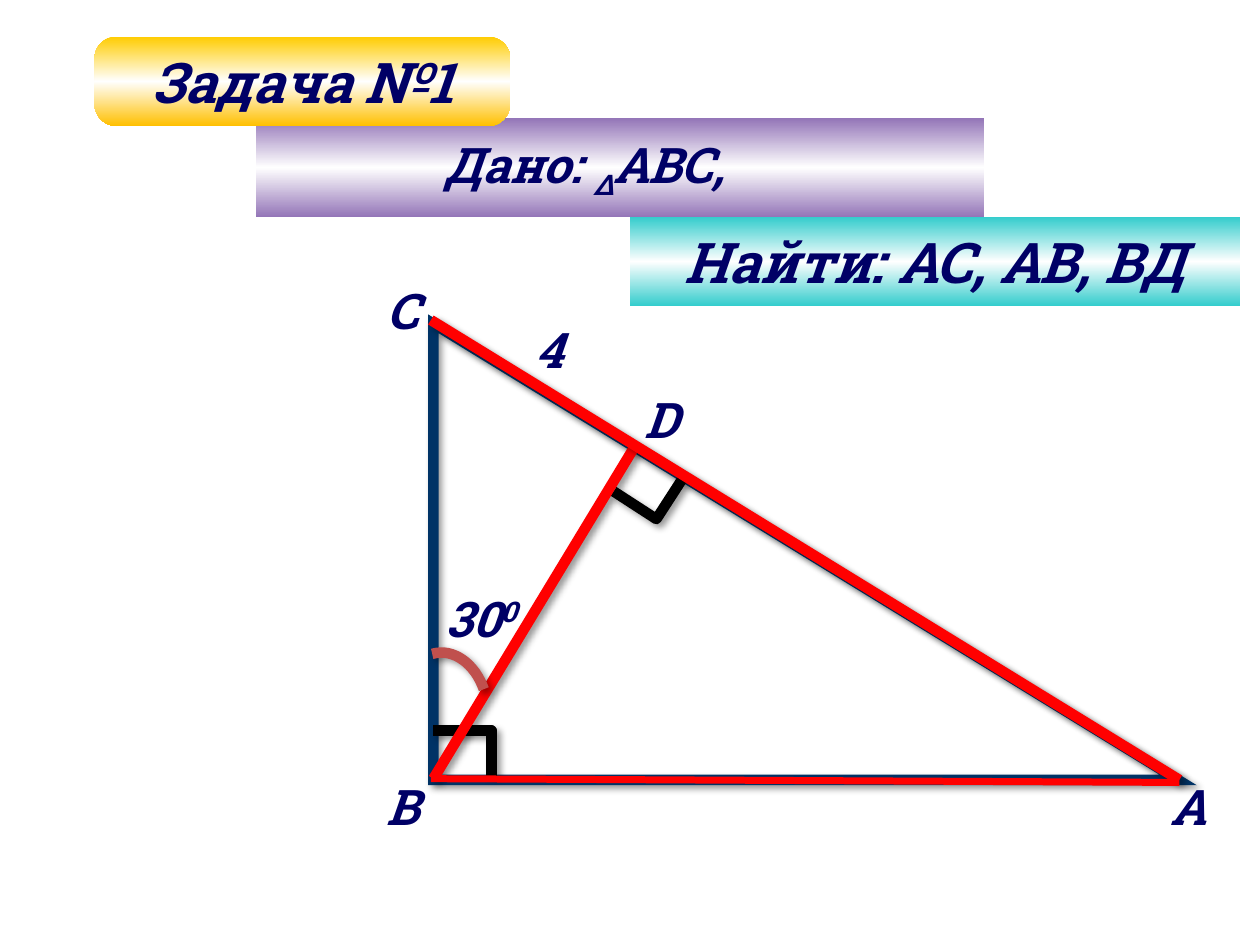
from copy import deepcopy

from lxml.etree import SubElement
from pptx import Presentation
from pptx.dml.color import RGBColor
from pptx.enum.shapes import MSO_CONNECTOR, MSO_SHAPE
from pptx.enum.text import MSO_ANCHOR, MSO_AUTO_SIZE, PP_ALIGN
from pptx.oxml.ns import qn
from pptx.util import Inches, Pt

FONT = "Roboto Slab"
INK = RGBColor(0x00, 0x00, 0x66)
NAVY = RGBColor(0x00, 0x00, 0x80)
SIDE_BLUE = RGBColor(0x00, 0x33, 0x66)
RED = RGBColor(0xFF, 0x00, 0x00)
ARC_RED = RGBColor(0xC0, 0x50, 0x4D)
BLACK = RGBColor(0x00, 0x00, 0x00)
WHITE = RGBColor(0xFF, 0xFF, 0xFF)
TEAL = RGBColor(0x33, 0xCC, 0xCC)
VIOLET = RGBColor(0x94, 0x76, 0xB8)
YELLOW = RGBColor(0xFF, 0xCC, 0x00)
AMBER = RGBColor(0xFF, 0xC0, 0x00)

# Text runs are (text, baseline shift in percent).
TITLE = [("Задача №1", 0)]
GIVEN = [("Дано: ", 0), ("Δ", -25), ("АВС,", 0)]
FIND = [("Найти: АС, АВ, ВД", 0)]
LABELS = [  # runs, left, top, width
    ([("А", 0)], 9.19, 6.11, 0.46),
    ([("B", 0)], 2.97, 6.11, 0.5),
    ([("C", 0)], 2.97, 2.18, 0.49),
    ([("D", 0)], 5.02, 3.04, 0.46),
    ([("4", 0)], 4.15, 2.49, 0.47),
    ([("30", 0), ("0", 30)], 3.44, 4.62, 0.91),
]
LABEL_HEIGHT = 0.57

TITLE_BOX = (0.75, 0.29, 3.3, 0.71)
GIVEN_BOX = (2.03, 0.94, 5.78, 0.78)
FIND_BOX = (5, 1.72, 4.84, 0.71)

TRIANGLE = (3.44, 2.57, 5.91, 3.62)
B, D = (3.44, 6.18), (5.04, 3.54)
RIGHT_ANGLE_B = [(3.44, 5.8), (3.9, 5.8), (3.9, 6.16)]
RIGHT_ANGLE_D = [(4.87, 3.9), (5.21, 4.12), (5.41, 3.81)]
ARC_CONTROLS = [(3.43, 5.19), (3.6, 5.14), (3.77, 5.27), (3.84, 5.47)]
ARC_STEPS = 16


def write(frame, runs, size):
    paragraph = frame.paragraphs[0]
    for text, shift in runs:
        run = paragraph.add_run()
        run.text = text
        font = run.font
        font.name, font.size, font.bold, font.italic = FONT, Pt(size), True, True
        font.color.rgb = INK
        if shift:
            font._element.set("baseline", str(shift * 1000))


def write_centred(frame, runs, size, right_inset=0.1):
    frame.word_wrap = True
    frame.auto_size = MSO_AUTO_SIZE.NONE
    frame.vertical_anchor = MSO_ANCHOR.MIDDLE
    frame.margin_right = Inches(right_inset)
    frame.paragraphs[0].alignment = PP_ALIGN.CENTER
    write(frame, runs, size)


def set_effects(part, shadow):
    """Replace the theme shadow with a soft offset one, or with none."""
    effects = SubElement(part._element.spPr, qn("a:effectLst"))
    if shadow:
        outer = SubElement(effects, qn("a:outerShdw"), blurRad=str(Pt(4)),
                           dist=str(Pt(3)), dir=str(45 * 60000))
        black = SubElement(outer, qn("a:srgbClr"), val="000000")
        SubElement(black, qn("a:alpha"), val="40000")


def style_line(part, color, width, shadow=True):
    part.line.color.rgb = color
    part.line.width = Pt(width)
    set_effects(part, shadow)


def add_segment(shapes, start, end, color, width, shadow=True):
    ends = [Inches(v) for v in (*start, *end)]
    segment = shapes.add_connector(MSO_CONNECTOR.STRAIGHT, *ends)
    style_line(segment, color, width, shadow)


def add_polyline(shapes, points, color, width):
    start, *rest = [(Inches(x), Inches(y)) for x, y in points]
    builder = shapes.build_freeform(*start)
    builder.add_line_segments(rest, close=False)
    polyline = builder.convert_to_shape()
    polyline.fill.background()
    style_line(polyline, color, width)


def cubic_points(controls, steps):
    points = []
    for i in range(steps + 1):
        t = i / steps
        weights = ((1 - t) ** 3, 3 * t * (1 - t) ** 2, 3 * t * t * (1 - t), t ** 3)
        points.append(tuple(sum(w * p[axis] for w, p in zip(weights, controls))
                            for axis in (0, 1)))
    return points


def add_banner(shapes, preset, box, top_color, bottom_color):
    banner = shapes.add_shape(preset, *map(Inches, box))
    banner.fill.gradient()
    banner.fill.gradient_angle = 270
    stop_list = banner._element.spPr.find(".//" + qn("a:gsLst"))
    stop_list.insert(1, deepcopy(stop_list[0]))
    colors = (top_color, WHITE, bottom_color)
    for stop, color, position in zip(banner.fill.gradient_stops, colors, (0, 0.5, 1)):
        stop.color.rgb = color
        stop.position = position
    banner.line.fill.background()
    banner.shadow.inherit = False
    return banner


def add_title(shapes):
    """Lay the title placeholder over a rounded banner, in front of the rest."""
    banner = add_banner(shapes, MSO_SHAPE.ROUNDED_RECTANGLE, TITLE_BOX, YELLOW, AMBER)
    banner.adjustments[0] = 0.25
    title = shapes.title
    title.left, title.top, title.width, title.height = map(Inches, TITLE_BOX)
    write_centred(title.text_frame, TITLE, 32)
    banner._element.addnext(title._element)


def add_triangle(shapes):
    triangle = shapes.add_shape(MSO_SHAPE.RIGHT_TRIANGLE, *map(Inches, TRIANGLE))
    triangle.fill.background()
    style_line(triangle, SIDE_BLUE, 6)
    outline = triangle._element.spPr.find(qn("a:ln"))
    SubElement(outline, qn("a:miter"), lim="800000")


def main():
    deck = Presentation()
    deck.slide_width, deck.slide_height = Inches(10), Inches(7.5)
    shapes = deck.slides.add_slide(deck.slide_layouts[5]).shapes

    add_triangle(shapes)
    add_segment(shapes, B, (5.03, 3.57), NAVY, 3.5, shadow=False)
    add_polyline(shapes, RIGHT_ANGLE_B, BLACK, 6)
    add_polyline(shapes, RIGHT_ANGLE_D, BLACK, 6)
    add_segment(shapes, B, D, RED, 6)
    add_polyline(shapes, cubic_points(ARC_CONTROLS, ARC_STEPS), ARC_RED, 6)
    add_segment(shapes, (3.42, 2.54), (9.36, 6.19), RED, 6)
    add_segment(shapes, (3.42, 6.18), (9.36, 6.21), RED, 4, shadow=False)

    for runs, left, top, width in LABELS:
        label = shapes.add_textbox(*map(Inches, (left, top, width, LABEL_HEIGHT)))
        label.text_frame.word_wrap = False
        write(label.text_frame, runs, 28)

    find = add_banner(shapes, MSO_SHAPE.RECTANGLE, FIND_BOX, TEAL, TEAL)
    write_centred(find.text_frame, FIND, 32)
    given = add_banner(shapes, MSO_SHAPE.RECTANGLE, GIVEN_BOX, VIOLET, VIOLET)
    write_centred(given.text_frame, GIVEN, 28, right_inset=0.66)
    add_title(shapes)
    deck.save("out.pptx")


if __name__ == "__main__":
    main()
